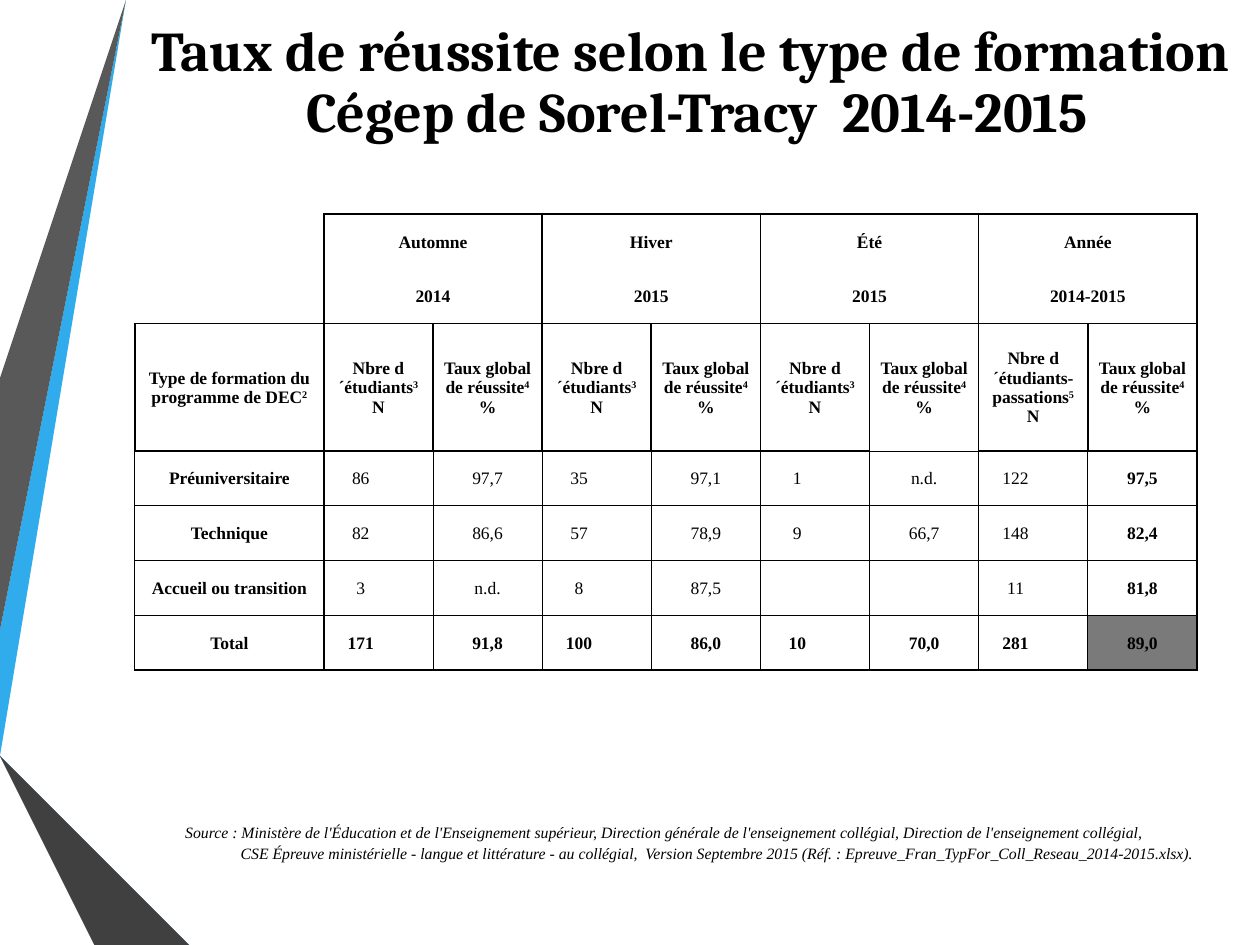
from dataclasses import dataclass

from lxml import etree
from pptx import Presentation
from pptx.dml.color import RGBColor
from pptx.enum import text
from pptx.oxml import ns
from pptx.util import Inches, Pt

COLORS = {
    "ink": "000000", "sky": "30ACEC", "gray": "595959", "black": "262626",
    "navy": "0C5A82", "blue": "1287C3", "charcoal": "404040", "total": "7A7A7A",
}
SERIF = "Times New Roman"
THIN, THICK = 0.5, 1


@dataclass
class Ribbon:
    color: str
    points: list[tuple[float, float]]


@dataclass
class Heading:
    label: str
    note: str = ""
    unit: str = ""


RIBBONS = [
    Ribbon("sky", [(0, 5.44), (0, 5.75), (0.22, 5.79), (1.17, 0), (0.89, 0)]),
    Ribbon("gray", [(0.83, 0), (0.55, 0), (0, 3.36), (0, 5.06)]),
    Ribbon("black", [(0, 6.19), (0, 6.21), (0.93, 7.5), (0.99, 7.5)]),
    Ribbon("navy", [(0, 5.79), (0, 5.8), (1.56, 7.5), (1.63, 7.5)]),
    Ribbon("blue", [(0, 5.79), (1.63, 7.5), (2.33, 7.5), (0.22, 5.79), (0, 5.75)]),
    Ribbon("charcoal", [(0, 6.19), (0.99, 7.5), (1.51, 7.5), (0, 5.86)]),
]

TERMS = [("Automne", "2014"), ("Hiver", "2015"), ("Été", "2015"), ("Année", "2014-2015")]
COUNT = Heading("Nbre d´étudiants", "3", "N")
PASSES = Heading("Nbre d´étudiants-passations", "5", "N")
RATE = Heading("Taux global de réussite", "4", "%")
HEADINGS = [Heading("Type de formation du programme de DEC", "2"),
            *[COUNT, RATE] * 3, PASSES, RATE]
RESULTS = [
    ["Préuniversitaire", "86", "97,7", "35", "97,1", "1", "n.d.", "122", "97,5"],
    ["Technique", "82", "86,6", "57", "78,9", "9", "66,7", "148", "82,4"],
    ["Accueil ou transition", "3", "n.d.", "8", "87,5", "", "", "11", "81,8"],
    ["Total", "171", "91,8", "100", "86,0", "10", "70,0", "281", "89,0"],
]
HEAD_ROW = 2
LAST_ROW = HEAD_ROW + len(RESULTS)
LAST_COL = len(HEADINGS) - 1
TABLE_W, TABLE_H, FIRST_W, HEAD_H = 8.43, 3.62, 1.5, 1.01

SOURCE = [
    ("Source\u00a0: Ministère de l'Éducation et de l'Enseignement supérieur, Direction générale "
     "de l'enseignement collégial, Direction de l'enseignement collégial,", 0.01),
    ("CSE Épreuve ministérielle - langue et littérature - au collégial,  Version Septembre 2015 "
     "(Réf.\u00a0: Epreuve_Fran_TypFor_Coll_Reseau_2014-2015.xlsx).", 0.45),
]


def rgb(name: str) -> RGBColor:
    return RGBColor.from_string(COLORS[name])


def set_font(font, size: float, name: str = SERIF, bold: bool = False,
             italic: bool = False) -> None:
    font.size, font.name, font.bold, font.italic = Pt(size), name, bold, italic
    font.color.rgb = rgb("ink")


def draw_ribbon(slide, ribbon: Ribbon) -> None:
    start, *rest = ribbon.points
    builder = slide.shapes.build_freeform(*start, scale=Inches(1))
    builder.add_line_segments(rest, close=True)
    sp = builder.convert_to_shape()
    sp.fill.solid()
    sp.fill.fore_color.rgb = rgb(ribbon.color)
    sp.line.fill.background()
    sp.shadow.inherit = False


def add_plain_table(slide, rows: int, cols: int, *box: float):
    """Table without header or banding, unfilled, with tight cell margins."""
    table = slide.shapes.add_table(rows, cols, *map(Inches, box)).table
    table.first_row = table.horz_banding = False
    for cell in table.iter_cells():
        cell.fill.background()
        cell.margin_left = cell.margin_right = cell.margin_top = Inches(0.01)
        cell.margin_bottom = 0
        cell.vertical_anchor = text.MSO_ANCHOR.MIDDLE
    return table


def set_borders(cell, widths: list[float]) -> None:
    """Left, right, top and bottom widths in points; 0 hides the side."""
    tc_pr = cell._tc.get_or_add_tcPr()
    for i, (side, width) in enumerate(zip("LRTB", widths)):
        ln = etree.Element(ns.qn(f"a:ln{side}"), w=str(Pt(width)))
        fill = etree.SubElement(ln, ns.qn("a:solidFill" if width else "a:noFill"))
        if width:
            etree.SubElement(fill, ns.qn("a:srgbClr"), val=COLORS["ink"])
        tc_pr.insert(i, ln)


def border_widths(row: int, col: int) -> list[float]:
    def vertical(edge: int) -> float:
        if row < HEAD_ROW and (edge == 0 or edge % 2 == 0):
            return 0 if edge == 0 else THICK
        if row < HEAD_ROW and edge != 1:
            return 0
        return THICK if row == HEAD_ROW or edge in (1, LAST_COL + 1) else THIN

    def horizontal(edge: int) -> float:
        if edge == 1 or (edge == 0 and col == 0):
            return 0
        if edge == HEAD_ROW + 1 and col == 6:
            return THIN
        return THICK if edge <= HEAD_ROW + 1 or edge == LAST_ROW + 1 else THIN

    return [vertical(col), vertical(col + 1), horizontal(row), horizontal(row + 1)]


def write_cell(cell, heading: Heading, bold: bool = True) -> None:
    p = cell.text_frame.paragraphs[0]
    p.alignment = text.PP_ALIGN.CENTER
    set_font(p.font, 10, bold=bold)
    if heading.label:
        p.add_run().text = heading.label
    if heading.note:
        r = p.add_run()
        r.text = heading.note
        r.font._element.set("baseline", "30000")
    if heading.unit:
        p.add_line_break()
        p.add_run().text = heading.unit


def draw_results(slide) -> None:
    table = add_plain_table(slide, LAST_ROW + 1, LAST_COL + 1, 1.07, 1.7, TABLE_W, TABLE_H)
    for i, column in enumerate(table.columns):
        column.width = Inches((TABLE_W - FIRST_W) / LAST_COL if i else FIRST_W)
    for i, row in enumerate(table.rows):
        row.height = Inches(HEAD_H if i == HEAD_ROW else (TABLE_H - HEAD_H) / LAST_ROW)

    for i, term in enumerate(TERMS):
        for row, label in enumerate(term):
            cell = table.cell(row, 2 * i + 1)
            cell.merge(table.cell(row, 2 * i + 2))
            write_cell(cell, Heading(label))
    for col, heading in enumerate(HEADINGS):
        write_cell(table.cell(HEAD_ROW, col), heading)
    for row, values in enumerate(RESULTS, HEAD_ROW + 1):
        for col, value in enumerate(values):
            cell = table.cell(row, col)
            write_cell(cell, Heading(value), row == LAST_ROW or col in (0, LAST_COL))
            if col % 2:
                cell.margin_right = Inches(0.29)

    grand_total = table.cell(LAST_ROW, LAST_COL)
    grand_total.fill.solid()
    grand_total.fill.fore_color.rgb = rgb("total")
    for row in range(LAST_ROW + 1):
        for col in range(LAST_COL + 1):
            set_borders(table.cell(row, col), border_widths(row, col))


def draw_source(slide) -> None:
    table = add_plain_table(slide, len(SOURCE), 1, 1.46, 6.51, 8.47, 0.34)
    for i, (line, indent) in enumerate(SOURCE):
        cell = table.cell(i, 0)
        cell.text = line
        cell.margin_left = Inches(indent)
        cell.vertical_anchor = text.MSO_ANCHOR.BOTTOM
        set_font(cell.text_frame.paragraphs[0].font, 9, italic=True)
        set_borders(cell, [0] * 4)


def write_title(slide) -> None:
    title = slide.shapes.title
    title.left, title.top, title.width, title.height = map(Inches, (0.91, -0.42, 9.25, 2.17))
    tf = title.text_frame
    tf.text = "Taux de réussite selon le type de formation \vCégep de Sorel-Tracy  2014-2015"
    tf.auto_size = text.MSO_AUTO_SIZE.NONE
    tf.vertical_anchor = text.MSO_ANCHOR.MIDDLE
    p = tf.paragraphs[0]
    p.alignment, p.line_spacing = text.PP_ALIGN.CENTER, 0.9
    set_font(p.font, 32, "Cambria", bold=True)
    slide.shapes._spTree.append(title._element)  # in front of the ribbons


def main() -> None:
    prs = Presentation()
    prs.slide_width, prs.slide_height = Inches(10), Inches(7.5)
    slide = prs.slides.add_slide(prs.slide_layouts[5])
    for ribbon in RIBBONS:
        draw_ribbon(slide, ribbon)
    write_title(slide)
    draw_results(slide)
    draw_source(slide)
    prs.save("out.pptx")


if __name__ == "__main__":
    main()
